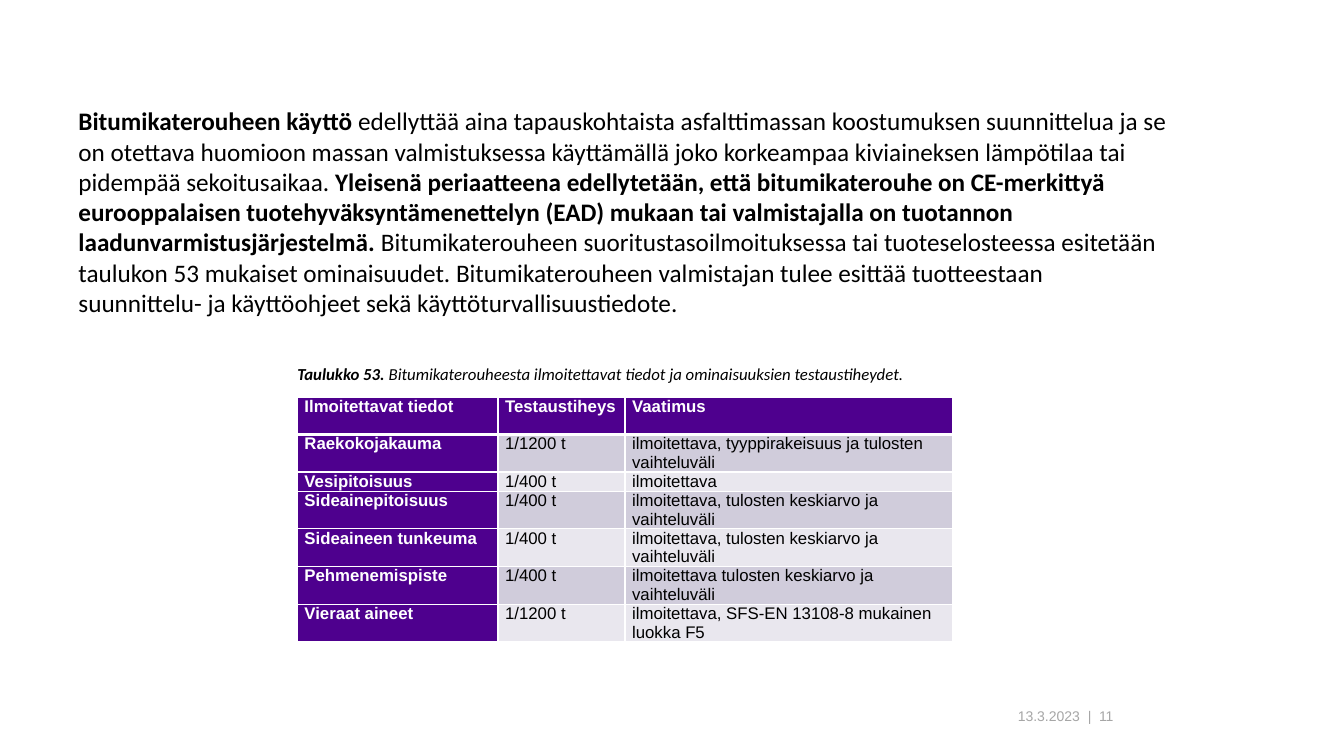
"""Builds the slide on the use of bitumen roofing granulate and its table 53."""
from lxml import etree
from pptx import Presentation
from pptx.dml.color import RGBColor
from pptx.enum import text
from pptx.oxml import ns
from pptx.util import Inches, Pt

PURPLE = RGBColor(0x4E, 0x00, 0x8E)
DARK_BAND = RGBColor(0xD0, 0xCC, 0xDB)
LIGHT_BAND = RGBColor(0xE9, 0xE7, 0xEE)
WHITE = RGBColor(0xFF, 0xFF, 0xFF)
BLACK = RGBColor(0x00, 0x00, 0x00)
GREY = RGBColor(0xA6, 0xA6, 0xA6)


def format_font(font, name, size, color, bold=False, italic=False):
    font.name, font.size, font.bold, font.italic = name, Pt(size), bold, italic
    font.color.rgb = color


def add_text_box(slide, left, top, width, height, anchor, side_insets=(0.1, 0.1)):
    frame = slide.shapes.add_textbox(
        Inches(left), Inches(top), Inches(width), Inches(height)).text_frame
    frame.word_wrap = True
    frame.vertical_anchor = anchor
    frame.margin_left, frame.margin_right = map(Inches, side_insets)
    return frame.paragraphs[0]


presentation = Presentation()
presentation.slide_width = Inches(13.33)
presentation.slide_height = Inches(7.5)
slide = presentation.slides.add_slide(presentation.slide_layouts[6])

rows = [
    ("Ilmoitettavat tiedot", "Testaustiheys", "Vaatimus"),
    ("Raekokojakauma", "1/1200 t", "ilmoitettava, tyyppirakeisuus ja tulosten vaihteluväli"),
    ("Vesipitoisuus", "1/400 t", "ilmoitettava"),
    ("Sideainepitoisuus", "1/400 t", "ilmoitettava, tulosten keskiarvo ja vaihteluväli"),
    ("Sideaineen tunkeuma", "1/400 t", "ilmoitettava, tulosten keskiarvo ja vaihteluväli"),
    ("Pehmenemispiste", "1/400 t", "ilmoitettava tulosten keskiarvo ja vaihteluväli"),
    ("Vieraat aineet", "1/1200 t", "ilmoitettava, SFS-EN 13108-8 mukainen luokka F5"),
]
row_heights = [0.19 if row[0] == "Vesipitoisuus" else 0.37 for row in rows]
table = slide.shapes.add_table(
    len(rows), 3, Inches(2.95), Inches(3.94), Inches(6.5), Inches(sum(row_heights))).table
for column, width in zip(table.columns, (1.99, 1.26, 3.25)):
    column.width = Inches(width)
for row_index, row in enumerate(rows):
    table.rows[row_index].height = Inches(row_heights[row_index])
    for column_index, value in enumerate(row):
        cell = table.cell(row_index, column_index)
        cell.margin_left = cell.margin_right = Inches(0.07)
        cell.margin_top = cell.margin_bottom = 0
        cell.text_frame.text = value
        heading = row_index == 0 or column_index == 0
        format_font(cell.text_frame.paragraphs[0].runs[0].font, "Arial", 12,
                    WHITE if heading else BLACK, bold=heading)
        properties = cell._tc.get_or_add_tcPr()
        for side in ("lnL", "lnR", "lnT", "lnB"):
            thick = (row_index, side) in ((0, "lnB"), (1, "lnT"))
            border = etree.SubElement(properties, ns.qn(f"a:{side}"), w=str(Pt(3 if thick else 1)))
            border_fill = etree.SubElement(border, ns.qn("a:solidFill"))
            etree.SubElement(border_fill, ns.qn("a:srgbClr"), val=str(WHITE))
        cell.fill.solid()
        band = DARK_BAND if row_index % 2 else LIGHT_BAND
        cell.fill.fore_color.rgb = PURPLE if heading else band

date = add_text_box(slide, 9.87, 6.96, 0.84, 0.28, text.MSO_ANCHOR.BOTTOM, (0, 0))
date.text = "13.3.2023"
date.alignment = text.PP_ALIGN.RIGHT

page_number = add_text_box(slide, 10.79, 6.96, 0.41, 0.28, text.MSO_ANCHOR.BOTTOM, (0, 0.1))
page_number.text = "|\t11"
tab_list = etree.SubElement(page_number._p.get_or_add_pPr(), ns.qn("a:tabLst"))
etree.SubElement(tab_list, ns.qn("a:tab"), pos=str(Inches(0.11)), algn="l")
for paragraph in (date, page_number):
    format_font(paragraph.runs[0].font, "Arial", 10, GREY)

caption = add_text_box(slide, 2.85, 3.56, 6.59, 0.3, text.MSO_ANCHOR.MIDDLE)
caption_parts = [
    ("Taulukko 53.", True),
    (" Bitumikaterouheesta ilmoitettavat tiedot ja ominaisuuksien testaustiheydet.", False),
]
body = add_text_box(slide, 0.68, 1, 11.03, 2.22, text.MSO_ANCHOR.TOP)
body_parts = [
    ("Bitumikaterouheen käyttö ", True),
    ("edellyttää aina tapauskohtaista asfalttimassan koostumuksen suunnittelua ja se on "
     "otettava huomioon massan valmistuksessa käyttämällä joko korkeampaa kiviaineksen "
     "lämpötilaa tai pidempää sekoitusaikaa. ", False),
    ("Yleisenä periaatteena edellytetään, että bitumikaterouhe on CE-merkittyä "
     "eurooppalaisen tuotehyväksyntämenettelyn (EAD) mukaan tai valmistajalla on "
     "tuotannon laadunvarmistusjärjestelmä. ", True),
    ("Bitumikaterouheen suoritustasoilmoituksessa tai tuoteselosteessa esitetään taulukon "
     "53 mukaiset ominaisuudet. Bitumikaterouheen valmistajan tulee esittää tuotteestaan "
     "suunnittelu- ja käyttöohjeet sekä käyttöturvallisuustiedote.", False),
]
for paragraph, parts, size, italic in ((caption, caption_parts, 12, True),
                                       (body, body_parts, 18, False)):
    for words, bold in parts:
        run = paragraph.add_run()
        run.text = words
        format_font(run.font, "Calibri", size, BLACK, bold, italic)

presentation.save("out.pptx")
